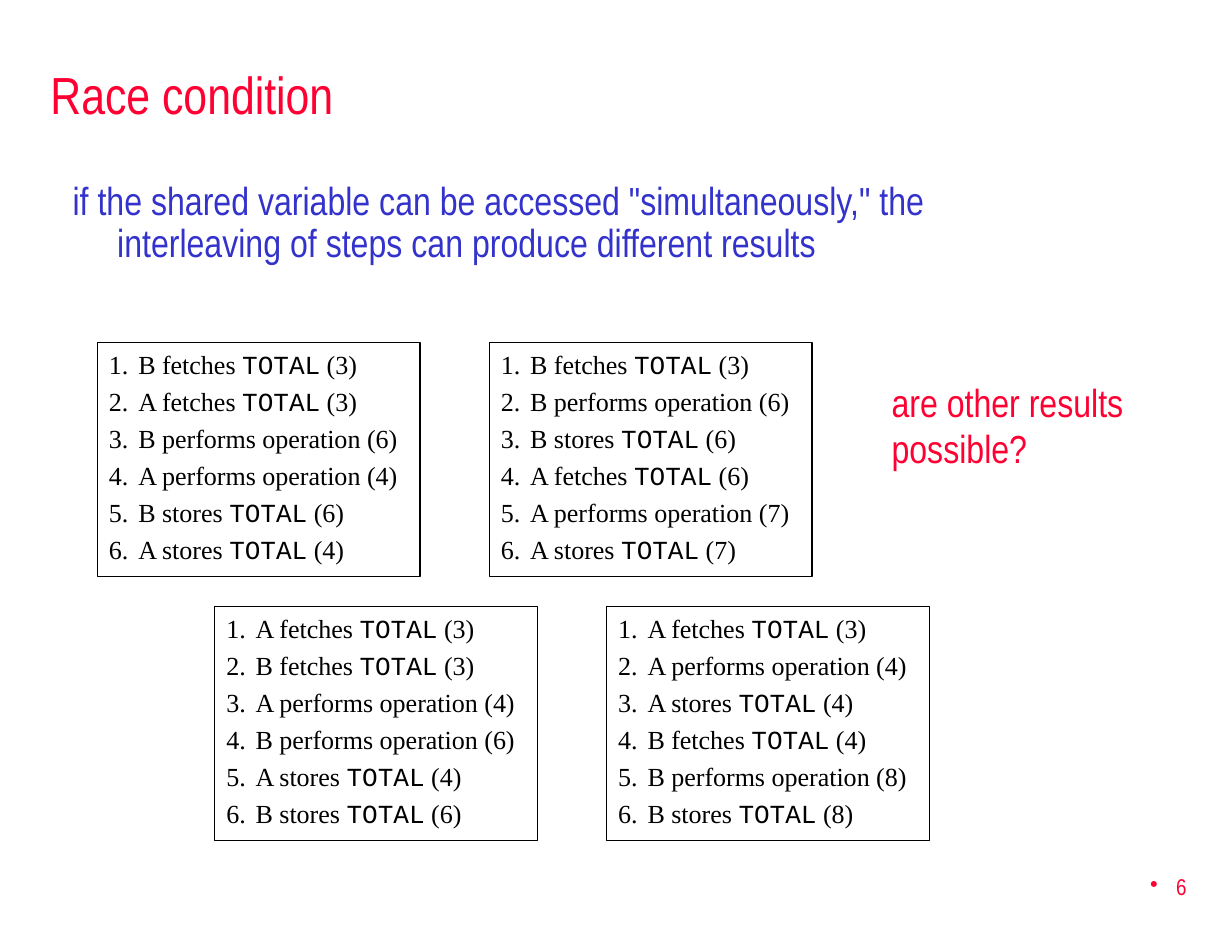
from lxml import etree
from pptx import Presentation
from pptx.dml.color import RGBColor
from pptx.enum.shapes import MSO_SHAPE
from pptx.enum.text import MSO_ANCHOR, MSO_AUTO_SIZE, PP_ALIGN
from pptx.oxml.ns import qn
from pptx.util import Inches, Pt

RED = RGBColor(0xFF, 0x00, 0x33)
BLUE = RGBColor(0x33, 0x33, 0xCC)
BLACK = RGBColor(0, 0, 0)
LEFT, RIGHT = PP_ALIGN.LEFT, PP_ALIGN.RIGHT
TOP, MIDDLE = MSO_ANCHOR.TOP, MSO_ANCHOR.MIDDLE
RECTANGLE = MSO_SHAPE.RECTANGLE
NO_AUTOFIT = MSO_AUTO_SIZE.NONE
TITLE_ONLY = 5

SANS, SERIF, MONO = "Arial Narrow", "Times New Roman", "Courier New"

# Order in which processes A and B take their three steps, row by row
SCHEDULES = [["BABABA", "BBBAAA"], ["ABABAB", "AAABBB"]]


def interleave(schedule, total=3):
    """Return the text of each step; A adds one to TOTAL and B doubles it."""
    held, done, steps = {}, {"A": 0, "B": 0}, []
    for name in schedule:
        if done[name] == 0:
            held[name] = total
            action = "fetches TOTAL"
        elif done[name] == 1:
            held[name] = held[name] + 1 if name == "A" else held[name] * 2
            action = "performs operation"
        else:
            total = held[name]
            action = "stores TOTAL"
        done[name] += 1
        steps.append(f"{name} {action} ({held[name]})")
    return steps


def hang(p, indent, tag, **attributes):
    """Give a paragraph a hanging indent and a bullet element."""
    pPr = p._p.get_or_add_pPr()
    pPr.set("marL", str(Inches(indent)))
    pPr.set("indent", str(-Inches(indent)))
    bullet = etree.SubElement(pPr, qn(tag))
    for key, value in attributes.items():
        bullet.set(key, value)


class SlideBuilder:
    def __init__(self, slide):
        self.s = slide

    def style_run(self, r, size, color, font):
        r.font.size = Pt(size)
        r.font.name = font
        r.font.color.rgb = color

    def fill_text(self, sp, text, size, color, align=LEFT, anchor=TOP):
        tf = sp.text_frame
        tf.word_wrap = True
        tf.auto_size = NO_AUTOFIT
        tf.vertical_anchor = anchor
        tf.text = text
        p = tf.paragraphs[0]
        p.alignment = align
        self.style_run(p.runs[0], size, color, SANS)
        return p

    def title(self, text, x, y, w, h):
        sp = self.s.shapes.title
        sp.left, sp.top, sp.width, sp.height = map(Inches, (x, y, w, h))
        self.fill_text(sp, text, 32, RED, anchor=MIDDLE)

    def text(self, text, x, y, w, h, size, color, **layout):
        sp = self.s.shapes.add_textbox(*map(Inches, (x, y, w, h)))
        return self.fill_text(sp, text, size, color, **layout)

    def step_box(self, steps, x, y, w, h):
        sp = self.s.shapes.add_shape(RECTANGLE, *map(Inches, (x, y, w, h)))
        sp.shadow.inherit = False
        sp.fill.background()
        sp.line.color.rgb = BLACK
        sp.line.width = Pt(0.75)
        tf = sp.text_frame
        tf.word_wrap = True
        tf.vertical_anchor = TOP
        tf.text = "\n".join(steps)
        for p, step in zip(tf.paragraphs, steps):
            p.alignment = LEFT
            p.space_before = Pt(3.5)
            hang(p, 0.25, "a:buAutoNum", type="arabicPeriod")
            before, word, after = step.partition("TOTAL")
            p.runs[0].text = before
            self.style_run(p.runs[0], 16, BLACK, SERIF)
            for part, font in ((word, MONO), (after, SERIF)):
                if part:
                    r = p.add_run()
                    r.text = part
                    self.style_run(r, 16, BLACK, font)


def main():
    prs = Presentation()
    prs.slide_width, prs.slide_height = Inches(10.5), Inches(8)
    b = SlideBuilder(prs.slides.add_slide(prs.slide_layouts[TITLE_ONLY]))

    b.title("Race condition", 0.33, 0.42, 9.92, 0.75)
    p = b.text('if the shared variable can be accessed "simultaneously," the '
               "interleaving of steps can produce different results",
               0.52, 1.5, 8.49, 0.98, 24, BLUE)
    p.line_spacing = 0.9
    p.space_before = Pt(5)
    hang(p, 0.38, "a:buNone")

    for row, schedules in enumerate(SCHEDULES):
        for col, schedule in enumerate(schedules):
            b.step_box(interleave(schedule),
                       0.83 + 3.34 * col + row, 2.92 + 2.25 * row, 2.75, 1.99)

    p = b.text("are other results possible?", 7.5, 3.17, 2.42, 0.91, 24, RED)
    p.space_before = Pt(5)
    p = b.text("6", 8.02, 7.29, 2.19, 0.53, 14, RED, align=RIGHT, anchor=MIDDLE)
    hang(p, 0.22, "a:buChar", char="•")

    prs.save("out.pptx")


if __name__ == "__main__":
    main()
